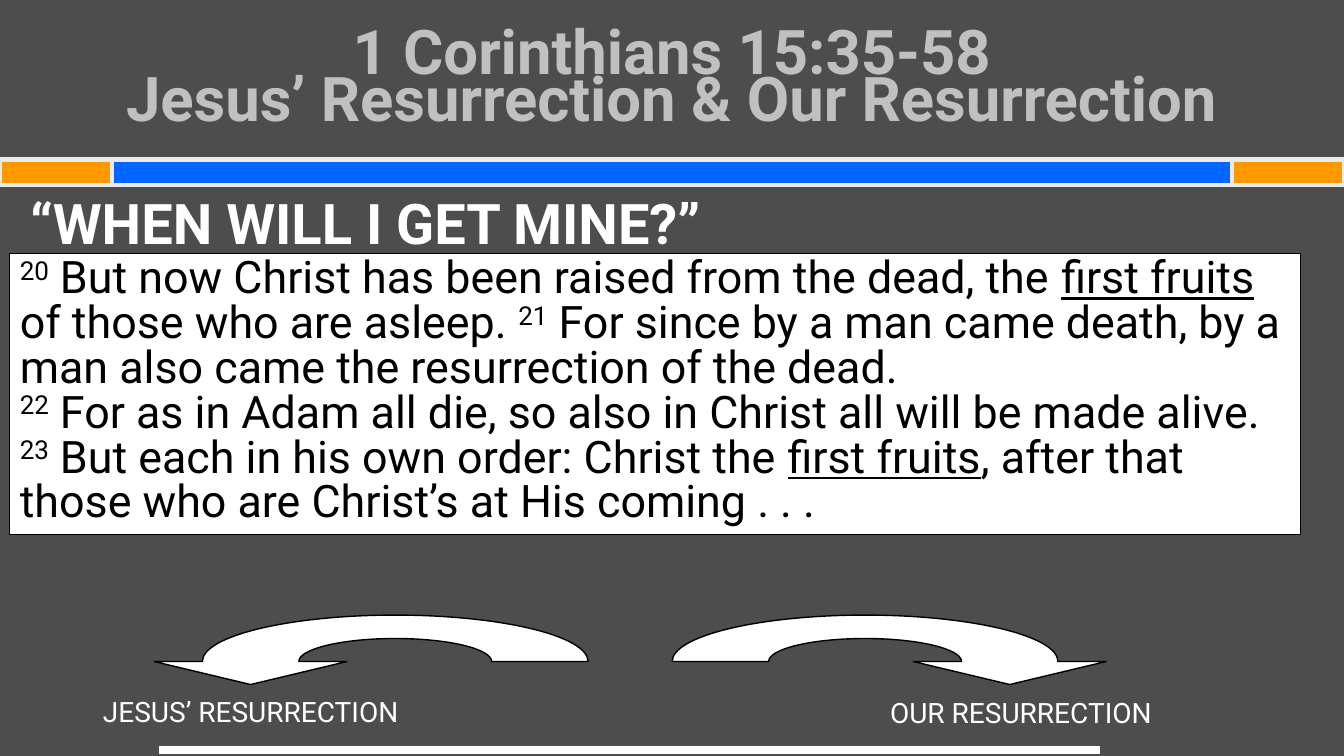
from pptx import Presentation
from pptx import util as u
from pptx.dml.color import RGBColor
from pptx.enum import shapes, text
from pptx.oxml import parse_xml
from pptx.oxml.ns import nsdecls, qn

THEME = {
    "font": "Roboto", "back": "4D4D4D", "title": "C0C0C0", "white": "FFFFFF",
    "black": "000000", "blue": "0066FF", "gold": "FF9900", "edge": "EAEAEA",
    "big": 44, "head": 40, "verse": 32, "label": 20,
}
WIDE, HIGH = 33.87, 19.05
TITLE = ["1 Corinthians 15:35-58", "Jesus’ Resurrection & Our Resurrection"]
HEAD = "“WHEN WILL I GET MINE?”"
VERSES = [
    [("20", "sup"), (" But now Christ has been raised from the dead, the ", ""),
     ("first fruits", "line"), (" of those who are asleep. ", ""), ("21", "sup"),
     (" For since by a man came death, by a man also came the resurrection of the dead. ", "")],
    [("22", "sup"), (" For as in Adam all die, so also in Christ all will be made alive. ", ""),
     ("23", "sup"), (" But each in his own order: Christ the ", ""),
     ("first fruits", "line"), (", after that those who are Christ’s at His coming . . .", "")],
]
LABELS = [("JESUS’ RESURRECTION", (1.8, 17.51, 9.04, 0.97)),
          ("OUR RESURRECTION", (20.75, 17.53, 9.96, 0.97))]
BARS = [("blue", 0, WIDE), ("gold", 0, 2.82), ("gold", WIDE - 2.82, 2.82)]
ARROWS = [(9.96, 1), (21.8, -1)]
OUTER, INNER = (4.86, 1.17), (2.43, 0.58)
BASE = 16.67
BEND = 0.55
CURVES = (0, 1, 3, 4)


def tint(name):
    return RGBColor.from_string(THEME[name])


def paint(shape, fill, line, width):
    shape.shadow.inherit = False
    shape.fill.solid()
    shape.fill.fore_color.rgb = tint(fill)
    shape.line.color.rgb = tint(line)
    shape.line.width = u.Pt(width)


def write(frame, lines, size, color, space, bold=False, align="LEFT", anchor="TOP"):
    form = {"word_wrap": True, "auto_size": text.MSO_AUTO_SIZE.NONE,
            "vertical_anchor": getattr(text.MSO_ANCHOR, anchor)}
    for key, value in form.items():
        setattr(frame, key, value)
    par = frame.paragraphs[0]
    par.alignment = getattr(text.PP_ALIGN, align)
    par.line_spacing = space
    par.space_before = u.Pt(0)
    for index, line in enumerate(lines):
        if index:
            par.add_line_break()
        for words, mark in line:
            run = par.add_run()
            run.text = words
            look = {"name": THEME["font"], "size": u.Pt(THEME[size]), "bold": bold,
                    "underline": mark == "line"}
            for key, value in look.items():
                setattr(run.font, key, value)
            run.font.color.rgb = tint(color)
            if mark == "sup":
                run._r.get_or_add_rPr().set("baseline", "30000")


def spot(node):
    point = node.find(qn("a:pt"))
    return int(point.get("x")), int(point.get("y"))


def bend(node, start):
    (ax, ay), (bx, by) = start, spot(node)
    dx, dy = round(BEND * (bx - ax)), round(BEND * (by - ay))
    if ay > by:
        knots = [(ax, ay + dy), (bx - dx, by), (bx, by)]
    else:
        knots = [(ax + dx, ay), (bx, by - dy), (bx, by)]
    points = "".join(f'<a:pt x="{x}" y="{y}"/>' for x, y in knots)
    return parse_xml(f"<a:cubicBezTo {nsdecls('a')}>{points}</a:cubicBezTo>")


def arrow(slide, mid, side):
    (far, top), (half, drop) = OUTER, INNER
    tip = -(far + half) / 2
    outline = [(-half, 0), (0, -drop), (half, 0), (far, 0), (0, -top), (-far, 0),
               (tip - half, 0), (tip, drop), (tip + half, 0)]
    spots = [(u.Cm(mid + side * x), u.Cm(BASE + y)) for x, y in outline]
    draft = slide.shapes.build_freeform(*spots[0])
    draft.add_line_segments(spots[1:], close=True)
    shape = draft.convert_to_shape()
    paint(shape, "white", "black", 1)
    nodes = list(shape._element.iter(qn("a:moveTo"), qn("a:lnTo")))
    places = [spot(node) for node in nodes]
    for index in CURVES:
        node = nodes[index + 1]
        node.getparent().replace(node, bend(node, places[index]))


def box(slide, place):
    return slide.shapes.add_textbox(*map(u.Cm, place)).text_frame


def rect(slide, *place):
    return slide.shapes.add_shape(shapes.MSO_SHAPE.RECTANGLE, *map(u.Cm, place))


def main():
    deck = Presentation()
    deck.slide_width, deck.slide_height = u.Cm(WIDE), u.Cm(HIGH)
    slide = deck.slides.add_slide(deck.slide_layouts[5])
    slide.background.fill.solid()
    slide.background.fill.fore_color.rgb = tint("back")

    for color, left, width in BARS:
        paint(rect(slide, left, 4.02, width, 0.64), color, "edge", 3)

    write(box(slide, (0.51, 5.08, 32.74, 13.54)), [[(HEAD, "")]], "head", "white", 0.7, True)

    title = slide.shapes.title
    slide.shapes._spTree.append(title._element)
    for key, value in {"left": 1.7, "top": 0.76, "width": 30.48, "height": 2.84}.items():
        setattr(title, key, u.Cm(value))
    write(title.text_frame, [[(line, "")] for line in TITLE], "big", "title",
          u.Pt(34), True, "CENTER", "MIDDLE")

    panel = rect(slide, 0.25, 6.38, 32.53, 7.09)
    paint(panel, "white", "black", 0.75)
    write(panel.text_frame, VERSES, "verse", "black", u.Pt(32))

    rule = slide.shapes.add_connector(shapes.MSO_CONNECTOR.STRAIGHT,
                                      *map(u.Cm, (4.02, 18.9, 27.73, 18.9)))
    rule.line.color.rgb = tint("white")
    rule.line.width = u.Pt(6)
    rule._element.spPr.append(parse_xml(f"<a:effectLst {nsdecls('a')}/>"))

    for mid, side in ARROWS:
        arrow(slide, mid, side)
    for words, place in LABELS:
        write(box(slide, place), [[(words, "")]], "label", "white", u.Pt(20), align="CENTER")
    deck.save("out.pptx")


if __name__ == "__main__":
    main()
